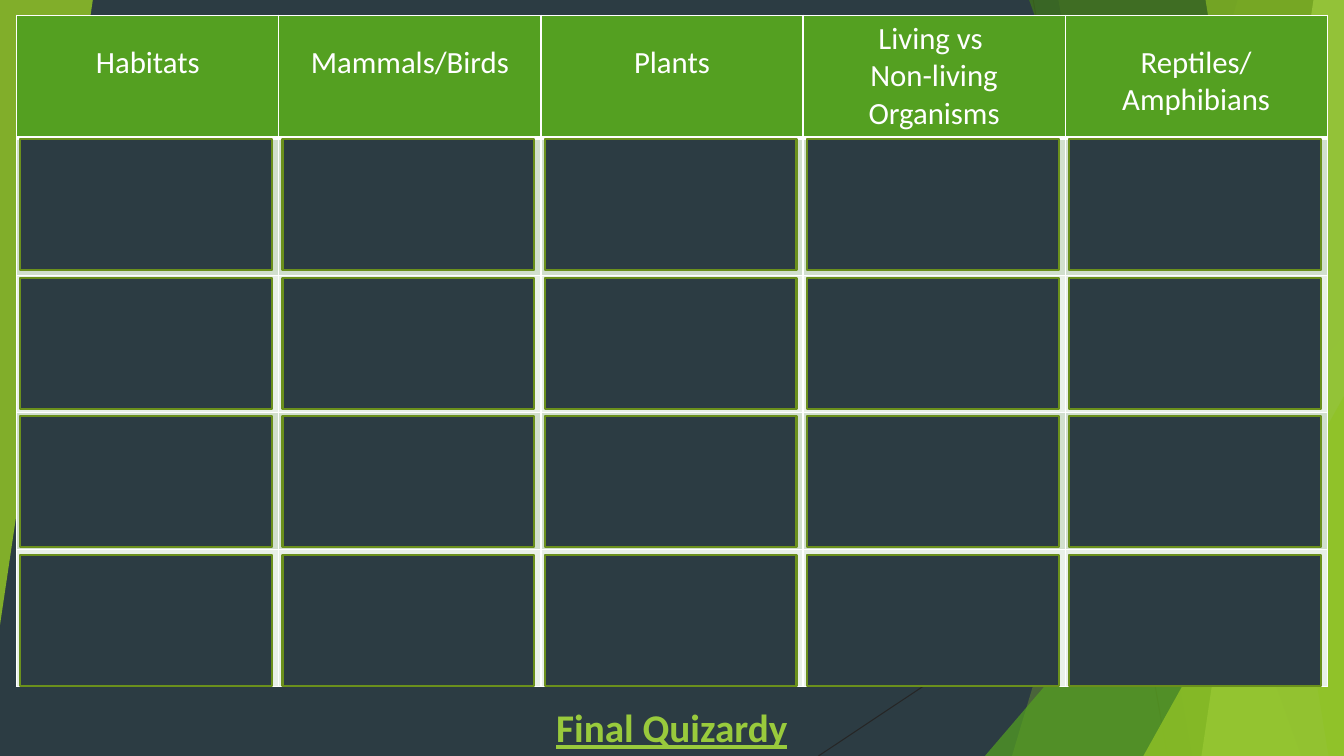
from itertools import product
from lxml import etree
from pptx import Presentation
from pptx.dml.color import RGBColor
from pptx.enum.shapes import MSO_CONNECTOR as Connector, MSO_SHAPE as Shape
from pptx.enum.text import PP_ALIGN as Align
from pptx.oxml.ns import qn
from pptx.util import Pt

# Content
CATEGORIES = ["Habitats", "Mammals/Birds", "Plants",
              "Living vs \nNon-living\nOrganisms", "Reptiles/\nAmphibians"]
FINAL_ROUND = "Final Quizardy"
QUESTION_ROWS = 4
FONT = "Calibri"

COLORS = {"slate": "2C3C43", "lime": "90C226", "green": "54A021",
          "forest": "3F7819", "pale": "C0E474", "white": "FFFFFF",
          "odd row": "D1DFCD", "even row": "E9F0E8",
          "tile edge": "6B901C", "link": "99CA3C", "hairline": "262626"}

# Layout in points
WIDTH, HEIGHT = 960, 540
BOARD_X, BOARD_Y = 12, 10.8
COLUMN_W, HEADER_H, ROW_H = 187.2, 88, 97.9
TILE_X, TILE_Y, TILE_W, TILE_H = 14.6, 99.5, 180, 93.6
TILE_STEP = 98.9

# Background facets, back to front
HAIRLINES = [(738, 0, 834, HEIGHT), (WIDTH, 290.2, 584.6, HEIGHT)]
# Bands reach the right edge: top x, bottom x, colour, opacity
# Wedges are right triangles: x, y, width, height, rotation, colour, opacity
FACETS = [
    ("band", (884.2, 722.9), "lime", 30),
    ("band", (756, 851.8), "lime", 20),
    ("wedge", (703.5, 240, 256.5, 300, 0), "green", 72),
    ("band", (735.1, 929.5), "forest", 70),
    ("band", (938.2, 858.2), "pale", 70),
    ("band", (861.1, 949), "lime", 65),
    ("wedge", (816.7, 283, 143.3, 257, 0), "lime", 80),
    ("wedge", (0, 0, 66.3, 446.4, 180), "lime", 85),
]


def rgb(name):
    return RGBColor.from_string(COLORS[name])


def paint(item, color, opacity=100):
    item.fill.solid()
    item.fill.fore_color.rgb = rgb(color)
    if opacity < 100:
        tint = item.fill._xPr.find(".//" + qn("a:srgbClr"))
        etree.SubElement(tint, qn("a:alpha"), val=str(opacity * 1000))


def write(frame, text, size, color, bold=False, underline=False):
    frame.text = text
    for paragraph in frame.paragraphs:
        paragraph.alignment = Align.CENTER
        for run in paragraph.runs:
            font = run.font
            font.name, font.size, font.bold = FONT, Pt(size), bold
            font.underline = underline
            font.color.rgb = rgb(color)


def border(cell, bottom):
    props = cell._tc.get_or_add_tcPr()
    for place, side in enumerate(("lnL", "lnR", "lnT", "lnB")):
        width = bottom if side == "lnB" else 1
        edge = etree.Element(qn("a:" + side), w=str(Pt(width)))
        fill = etree.SubElement(edge, qn("a:solidFill"))
        etree.SubElement(fill, qn("a:srgbClr"), val=COLORS["white"])
        props.insert(place, edge)


prs = Presentation()
prs.slide_width, prs.slide_height = Pt(WIDTH), Pt(HEIGHT)
slide = prs.slides.add_slide(prs.slide_layouts[6])
shapes = slide.shapes
paint(slide.background, "slate")

# Hairlines
for ends in HAIRLINES:
    hairline = shapes.add_connector(Connector.STRAIGHT, *map(Pt, ends))
    hairline.line.color.rgb = rgb("hairline")
    hairline.line.width = Pt(0.75)
    etree.SubElement(hairline._element.spPr, qn("a:effectLst"))

# Facets
for kind, geometry, color, opacity in FACETS:
    if kind == "band":
        top, bottom = geometry
        outline = shapes.build_freeform(Pt(top), 0)
        corners = [(WIDTH, 0), (WIDTH, HEIGHT), (bottom, HEIGHT)]
        outline.add_line_segments([(Pt(x), Pt(y)) for x, y in corners])
        facet = outline.convert_to_shape()
    else:
        *box, turn = geometry
        facet = shapes.add_shape(Shape.ISOSCELES_TRIANGLE, *map(Pt, box))
        facet.adjustments[0] = 1
        facet.rotation = turn
    paint(facet, color, opacity)
    facet.line.fill.background()
    facet.shadow.inherit = False

# Final round
final = shapes.add_textbox(Pt(317.5), Pt(499), Pt(324.7), Pt(41)).text_frame
final.word_wrap = True
write(final, FINAL_ROUND, 28, "link", bold=True, underline=True)

# Board
columns = len(CATEGORIES)
board = shapes.add_table(
    QUESTION_ROWS + 1, columns, Pt(BOARD_X), Pt(BOARD_Y),
    Pt(columns * COLUMN_W), Pt(HEADER_H + QUESTION_ROWS * ROW_H)).table
for column in board.columns:
    column.width = Pt(COLUMN_W)
for r, row in enumerate(board.rows):
    row.height = Pt(ROW_H if r else HEADER_H)
    for c, cell in enumerate(row.cells):
        if r:
            paint(cell, "odd row" if r % 2 else "even row")
        else:
            category = CATEGORIES[c]
            paint(cell, "green")
            cell.margin_left = cell.margin_right = Pt(8.6)
            # Shorter headings start lower
            cell.margin_top = Pt(3.6 if category.count("\n") == 2 else 20.6)
            cell.margin_bottom = Pt(3.6)
            write(cell.text_frame, category, 22, "white")
        border(cell, bottom=1 if r else 3)

# Tiles over the questions
for c, r in product(range(columns), range(QUESTION_ROWS)):
    tile = shapes.add_shape(
        Shape.RECTANGLE, Pt(TILE_X + c * COLUMN_W), Pt(TILE_Y + r * TILE_STEP),
        Pt(TILE_W), Pt(TILE_H))
    paint(tile, "slate")
    tile.line.color.rgb = rgb("tile edge")
    tile.line.width = Pt(1.5)
    tile.shadow.inherit = False

prs.save("out.pptx")
